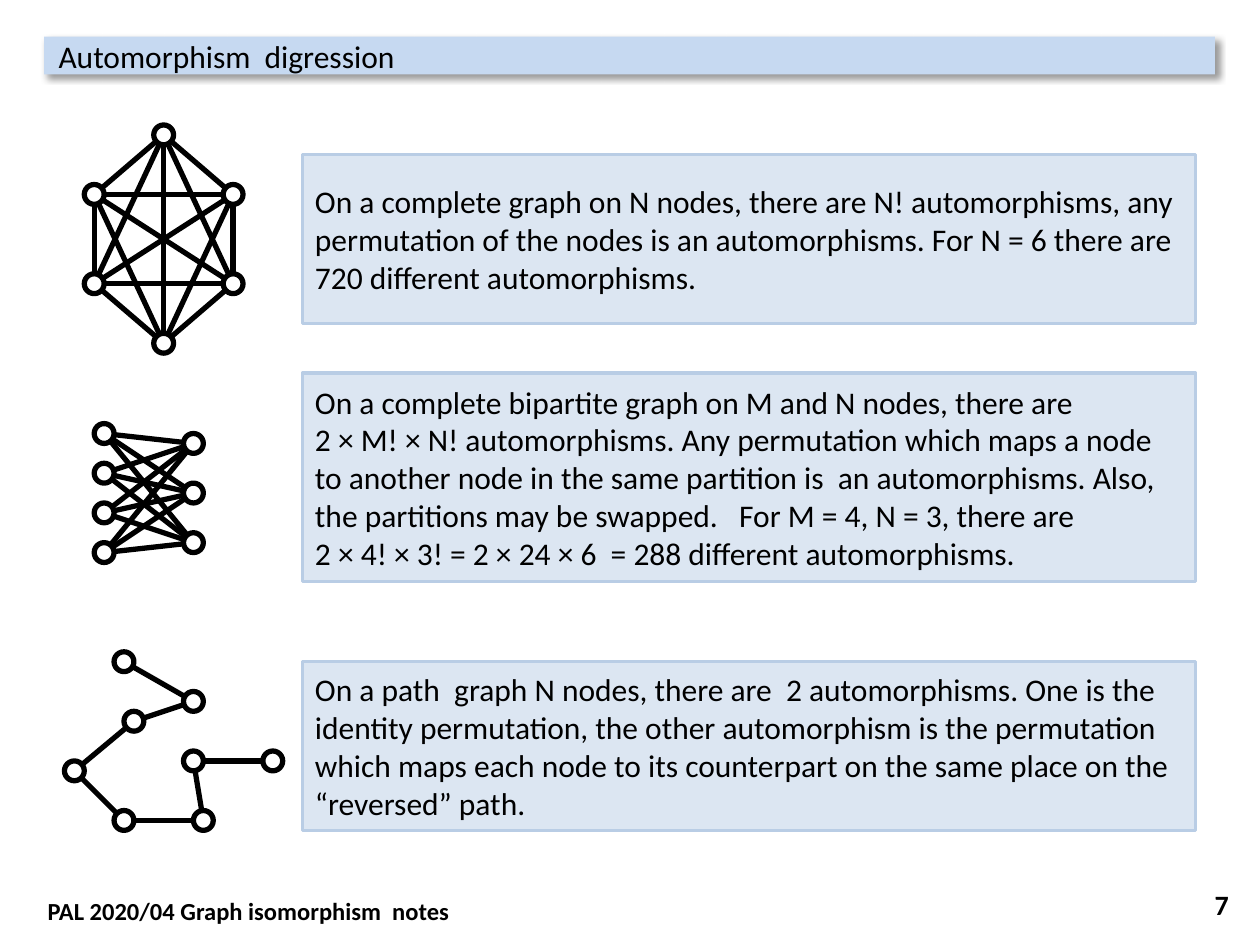
from itertools import combinations, product

from lxml import etree
from pptx import Presentation
from pptx.dml.color import RGBColor
from pptx.enum.shapes import MSO_CONNECTOR, MSO_SHAPE
from pptx.enum.text import MSO_ANCHOR, MSO_AUTO_SIZE, PP_ALIGN
from pptx.oxml import parse_xml
from pptx.oxml.ns import nsdecls, qn
from pptx.util import Cm, Pt

STRAIGHT = MSO_CONNECTOR.STRAIGHT
OVAL, RECTANGLE = MSO_SHAPE.OVAL, MSO_SHAPE.RECTANGLE
MIDDLE, TOP = MSO_ANCHOR.MIDDLE, MSO_ANCHOR.TOP
LEFT, RIGHT = PP_ALIGN.LEFT, PP_ALIGN.RIGHT
NO_AUTOFIT = MSO_AUTO_SIZE.NONE

FONT = "Calibri"
COLORS = {"ink": "000000", "node": "FFFFFF", "title": "C6D9F1",
          "panel": "DCE6F2", "border": "B9CDE5"}
NODE_SIZE = 0.4
PANEL_LEFT, PANEL_WIDTH = 6.1, 18

HEXAGON = [(1.4, 0), (2.8, 1.2), (2.8, 3), (1.4, 4.2), (0, 3), (0, 1.2)]
PARTITION_M = [(0, 0.8 * row) for row in range(4)]
PARTITION_N = [(1.8, 0.2 + row) for row in range(3)]
PATH = [(1, 0), (2.4, 0.8), (1.2, 1.2), (0, 2.2),
        (1, 3.2), (2.6, 3.2), (2.4, 2), (4, 2)]

EXAMPLES = [
    {"origin": (1.9, 2.72), "nodes": HEXAGON,
     "edges": list(combinations(HEXAGON, 2)), "top": 3.12, "height": 3.4,
     "lines": ["On a complete graph on N nodes, there are N! automorphisms, "
               "any permutation of the nodes is an automorphisms. "
               "For N = 6 there are 720 different automorphisms."]},
    {"origin": (2.1, 8.74), "nodes": PARTITION_M + PARTITION_N,
     "edges": list(product(PARTITION_M, PARTITION_N)), "top": 7.52, "height": 4.2,
     "lines": ["On a complete bipartite graph on M and N nodes, there are",
               "2 × M! × N! automorphisms. Any permutation which maps a node "
               "to another node in the same partition is  an automorphisms. "
               "Also, the partitions may be swapped.   For M = 4, N = 3, there are",
               "2 × 4! × 3! = 2 × 24 × 6  = 288 different automorphisms."]},
    {"origin": (1.5, 13.34), "nodes": PATH,
     "edges": list(zip(PATH, PATH[1:])), "top": 13.34, "height": 3.4,
     "lines": ["On a path  graph N nodes, there are  2 automorphisms. One is the "
               "identity permutation, the other automorphism is the permutation "
               "which maps each node to its counterpart on the same place on the "
               "“reversed” path."]},
]


def color(name):
    """Return the named colour of the palette."""
    return RGBColor.from_string(COLORS[name])


def paint(shape, fill, line, width):
    """Give a shape a flat fill and an outline."""
    shape.shadow.inherit = False
    shape.fill.solid()
    shape.fill.fore_color.rgb = color(fill)
    shape.line.color.rgb = color(line)
    shape.line.width = Pt(width)


def write(frame, lines, size, bold=False, align=LEFT, anchor=MIDDLE):
    """Fill a text frame with one paragraph for each line."""
    frame.word_wrap = True
    frame.vertical_anchor = anchor
    for index, line in enumerate(lines):
        para = frame.add_paragraph() if index else frame.paragraphs[0]
        para.alignment = align
        span = para.add_run()
        span.text = line
        span.font.name = FONT
        span.font.size = Pt(size)
        span.font.bold = bold
        span.font.color.rgb = color("ink")


def add_title(page, left, top, width, height, text):
    """Turn the title placeholder into a shaded bar."""
    title = page.shapes.title
    title.left, title.top = Cm(left), Cm(top)
    title.width, title.height = Cm(width), Cm(height)
    title.fill.solid()
    title.fill.fore_color.rgb = color("title")
    frame = title.text_frame
    frame.auto_size = NO_AUTOFIT
    frame.margin_left = Cm(0.29)
    frame.margin_right = frame.margin_top = frame.margin_bottom = 0
    write(frame, [text], 18)
    title._element.spPr.append(parse_xml(
        f'<a:effectLst {nsdecls("a")}><a:outerShdw blurRad="{Pt(4)}" dist="{Pt(3)}" '
        f'dir="2700000" algn="tl" rotWithShape="0"><a:srgbClr val="{COLORS["ink"]}">'
        '<a:alpha val="40000"/></a:srgbClr></a:outerShdw></a:effectLst>'))


def add_graph(page, left, top, nodes, edges):
    """Draw the edges of a graph, then its nodes over them."""
    for (x1, y1), (x2, y2) in edges:
        edge = page.shapes.add_connector(STRAIGHT, Cm(left + x1), Cm(top + y1),
                                         Cm(left + x2), Cm(top + y2))
        edge.line.color.rgb = color("ink")
        edge.line.width = Pt(3)
        etree.SubElement(edge._element.spPr, qn("a:effectLst"))
    for x, y in nodes:
        node = page.shapes.add_shape(OVAL, Cm(left + x - NODE_SIZE / 2),
                                     Cm(top + y - NODE_SIZE / 2),
                                     Cm(NODE_SIZE), Cm(NODE_SIZE))
        paint(node, "node", "ink", 3)


def add_panel(page, left, top, width, height, lines):
    """Add a bordered explanation panel."""
    panel = page.shapes.add_shape(RECTANGLE, Cm(left), Cm(top), Cm(width), Cm(height))
    paint(panel, "panel", "border", 2)
    write(panel.text_frame, lines, 18)


def add_label(page, left, top, width, height, text, size, align, anchor):
    """Add a bold line of footer text."""
    label = page.shapes.add_textbox(Cm(left), Cm(top), Cm(width), Cm(height))
    write(label.text_frame, [text], size, True, align, anchor)


def main():
    """Build the slide and save the deck."""
    deck = Presentation()
    deck.slide_width, deck.slide_height = Cm(25.4), Cm(19.05)
    page = deck.slides.add_slide(deck.slide_layouts.get_by_name("Title Only"))
    add_title(page, 0.89, 0.74, 23.6, 0.76, "Automorphism  digression")
    for example in EXAMPLES:
        add_graph(page, *example["origin"], example["nodes"], example["edges"])
        add_panel(page, PANEL_LEFT, example["top"], PANEL_WIDTH,
                  example["height"], example["lines"])
    add_label(page, 0.71, 17.93, 23.8, 0.86,
              "PAL 2020/04 Graph isomorphism  notes", 14, LEFT, TOP)
    add_label(page, 19.1, 17.73, 5.92, 1.02, "7", 16, RIGHT, MIDDLE)
    deck.save("out.pptx")


if __name__ == "__main__":
    main()
